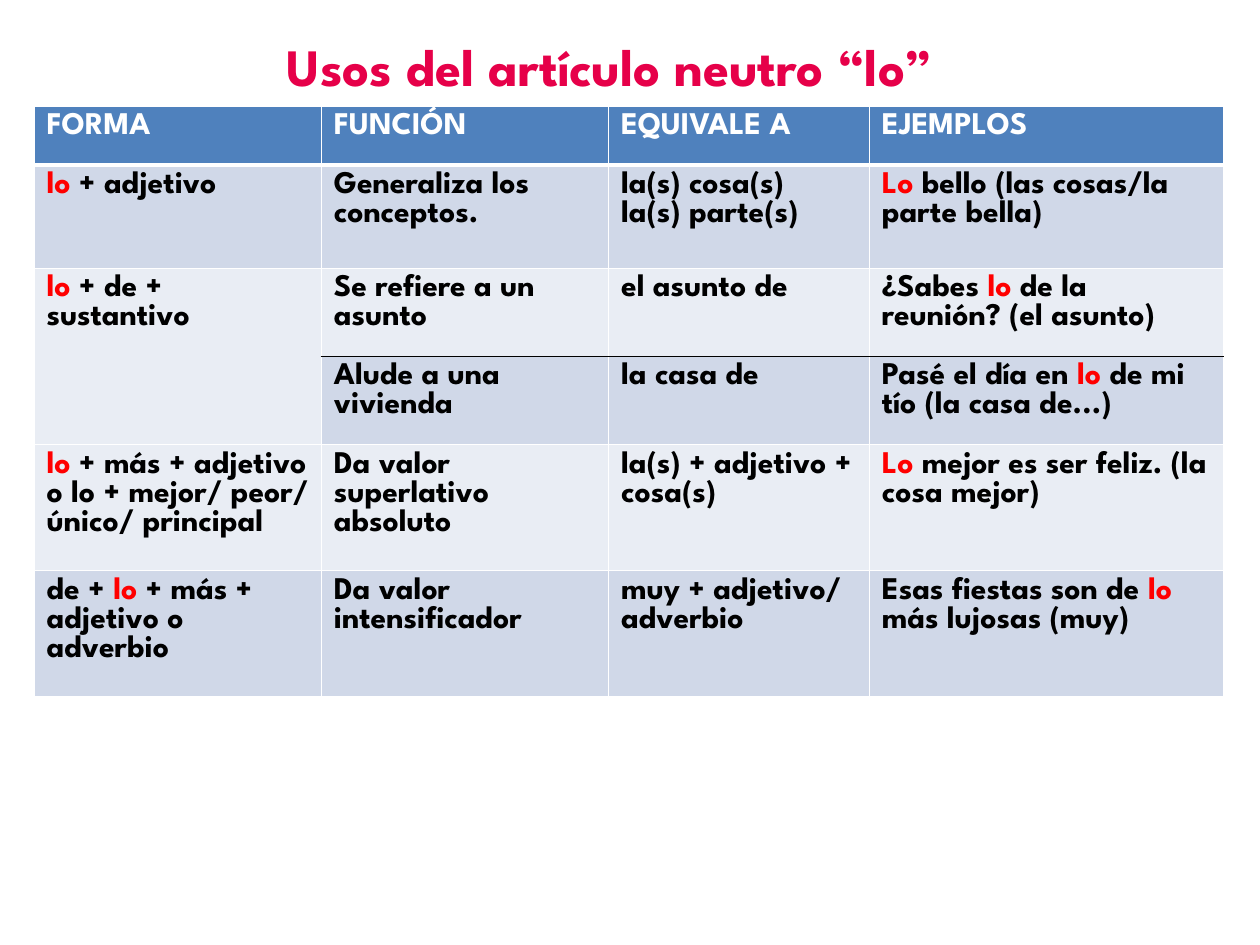
from lxml.etree import SubElement
from pptx import Presentation
from pptx.dml.color import RGBColor
from pptx.enum.text import MSO_ANCHOR, MSO_AUTO_SIZE, PP_ALIGN
from pptx.oxml.ns import qn
from pptx.util import Inches, Pt

FONT = "League Spartan"
COLORS = {
    "title": "E60049", "header": "4F81BD", "dark_band": "D0D8E8",
    "light_band": "E9EDF4", "white": "FFFFFF", "black": "000000", "lo": "FF0000",
}
TITLE_BOX = (1.22, 0.21, 7.24, 0.61)
TABLE_BOX = (0.27, 0.84, 9.44, 4.69)
COLUMNS = (2.28, 2.28, 2.07, 2.81)
HEIGHTS = (0.47, 0.82, 0.7, 0.7, 1, 1)
BANDS = ("header", "dark_band", "light_band", "dark_band", "light_band", "dark_band")
# Text between asterisks is highlighted; None continues the cell above.
ROWS = (
    ("FORMA", "FUNCIÓN", "EQUIVALE A", "EJEMPLOS"),
    ("*lo* + adjetivo", "Generaliza los conceptos.",
     "la(s) cosa(s)\nla(s) parte(s)", "*Lo* bello (las cosas/la parte bella)"),
    ("*lo* + de + sustantivo", "Se refiere a un asunto",
     "el asunto de", "¿Sabes *lo* de la reunión? (el asunto)"),
    (None, "Alude a una vivienda",
     "la casa de", "Pasé el día en *lo* de mi tío (la casa de...)"),
    ("*lo* + más + adjetivo o lo + mejor/ peor/ único/ principal",
     "Da valor superlativo absoluto", "la(s) + adjetivo + cosa(s)",
     "*Lo* mejor es ser feliz. (la cosa mejor)"),
    ("de + *lo* + más + adjetivo o adverbio", "Da valor intensificador",
     "muy + adjetivo/ adverbio", "Esas fiestas son de *lo* más lujosas (muy)"),
)


def rgb(name):
    return RGBColor.from_string(COLORS[name])


def add_run(p, text, size, color):
    r = p.add_run()
    r.text = text
    for key, value in {"name": FONT, "size": Pt(size), "bold": True}.items():
        setattr(r.font, key, value)
    r.font.color.rgb = rgb(color)


def add_title(s, box):
    sp = s.shapes.title
    for key, value in zip(("left", "top", "width", "height"), box):
        setattr(sp, key, Inches(value))
    tf = sp.text_frame
    for key, value in {"word_wrap": True, "auto_size": MSO_AUTO_SIZE.NONE,
                       "vertical_anchor": MSO_ANCHOR.BOTTOM}.items():
        setattr(tf, key, value)
    p = tf.paragraphs[0]
    p.alignment = PP_ALIGN.CENTER
    add_run(p, "Usos del artículo neutro “lo”", 30, "title")


def fill_text(tf, text, color):
    for i, line in enumerate(text.split("\n")):
        p = tf.add_paragraph() if i else tf.paragraphs[0]
        for j, part in enumerate(line.split("*")):
            if part:
                add_run(p, part, 18, "lo" if j % 2 else color)


def set_borders(cell, top, bottom, bottom_width):
    """Draw the four edges, which must come before the fill in the XML."""
    pr = cell._tc.get_or_add_tcPr()
    edges = {"L": ("white", 1), "R": ("white", 1),
             "T": (top, 1), "B": (bottom, bottom_width)}
    for side, (color, width) in edges.items():
        ln = SubElement(pr, qn(f"a:ln{side}"), w=str(Pt(width)))
        SubElement(SubElement(ln, qn("a:solidFill")), qn("a:srgbClr"), val=COLORS[color])


def add_uses_table(s, box):
    table = s.shapes.add_table(len(ROWS), len(COLUMNS), *map(Inches, box)).table
    for column, share in zip(table.columns, COLUMNS):
        column.width = Inches(box[2] * share / sum(COLUMNS))
    for row, share in zip(table.rows, HEIGHTS):
        row.height = Inches(box[3] * share / sum(HEIGHTS))
    for i, (texts, band) in enumerate(zip(ROWS, BANDS)):
        for j, text in enumerate(texts):
            cell = table.cell(i, j)
            set_borders(cell,
                        "black" if i == 3 and j else "white",
                        "black" if i == 2 and j else "white",
                        1 if i else 3)
            cell.fill.solid()
            cell.fill.fore_color.rgb = rgb(band)
            if text is None:
                table.cell(i - 1, j).merge(cell)
            else:
                fill_text(cell.text_frame, text, "black" if i else "white")


def main():
    prs = Presentation()
    prs.slide_width, prs.slide_height = Inches(10), Inches(7.5)
    s = prs.slides.add_slide(prs.slide_layouts[5])
    add_title(s, TITLE_BOX)
    add_uses_table(s, TABLE_BOX)
    prs.save("out.pptx")


if __name__ == "__main__":
    main()
